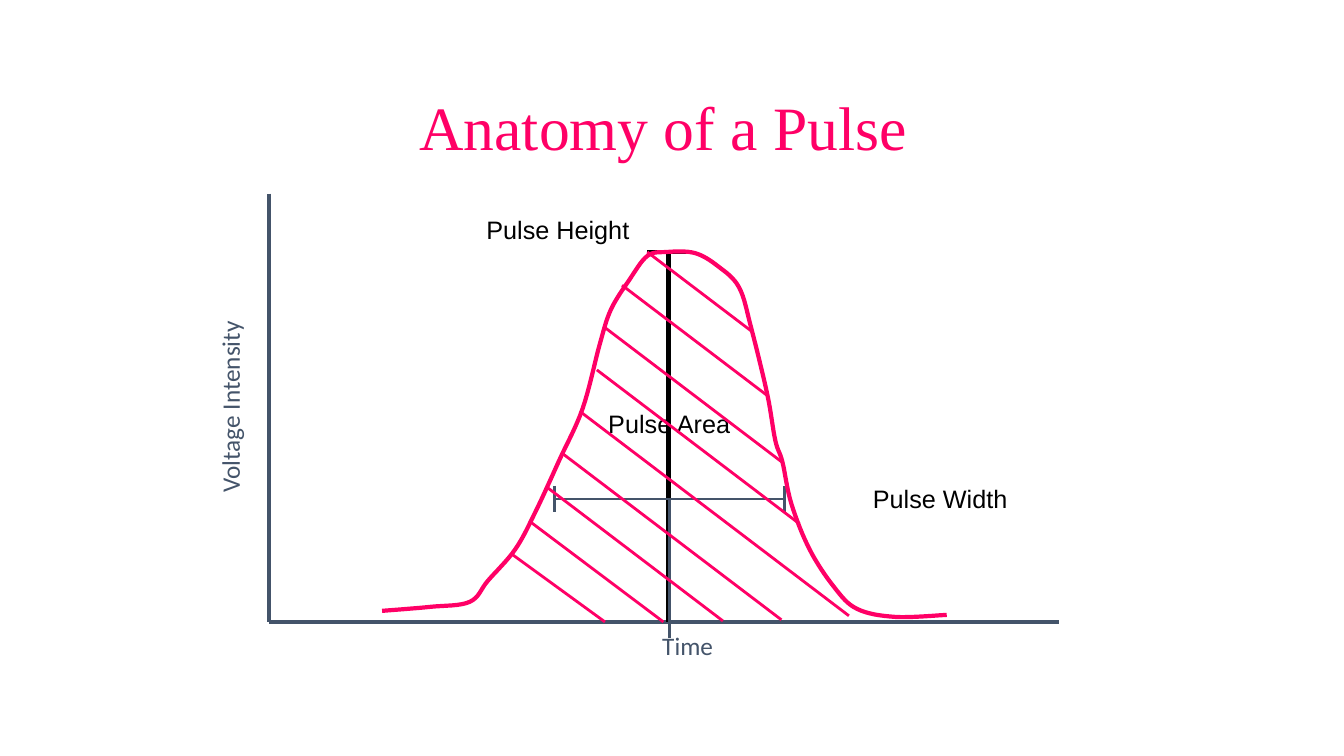
from pptx import Presentation
from pptx.dml.color import RGBColor
from pptx.enum.shapes import MSO_CONNECTOR
from pptx.enum.text import MSO_ANCHOR, PP_ALIGN
from pptx.oxml.ns import qn
from pptx.util import Inches, Pt
from lxml.etree import SubElement


class Theme:
    pink = RGBColor.from_string("FF0066")
    slate = RGBColor.from_string("44546A")
    black = RGBColor.from_string("000000")
    title = 44
    label = 18
    thick = 3
    thin = 2


deck = Presentation()
deck.slide_width, deck.slide_height = Inches(13.33), Inches(7.5)
slide = deck.slides.add_slide(deck.slide_layouts[6])
shapes = slide.shapes


def write(text, left, top, width, height=0.4, size=Theme.label, font="Arial",
          color=Theme.black, align=PP_ALIGN.RIGHT, anchor=MSO_ANCHOR.TOP,
          wrap=False, space=1.0, turn=0):
    box = shapes.add_textbox(Inches(left), Inches(top), Inches(width), Inches(height))
    box.rotation = turn
    frame = box.text_frame
    frame.word_wrap = wrap
    frame.vertical_anchor = anchor
    para = frame.paragraphs[0]
    para.alignment = align
    para.line_spacing = space
    run = para.add_run()
    run.text = text
    run.font.size = Pt(size)
    run.font.name = font
    run.font.color.rgb = color


def draw(x1, y1, x2, y2, color, weight):
    line = shapes.add_connector(MSO_CONNECTOR.STRAIGHT, Inches(x1), Inches(y1),
                                Inches(x2), Inches(y2))
    line.line.color.rgb = color
    line.line.width = Pt(weight)
    SubElement(line._element.spPr, qn("a:effectLst"))


# Title
write("Anatomy of a Pulse", 2.33, 0.67, 8.5, 1.25, size=Theme.title,
      font="Times New Roman", color=Theme.pink, align=PP_ALIGN.CENTER,
      anchor=MSO_ANCHOR.MIDDLE, wrap=True, space=0.9)

# Axes meet at the origin
start, base = 2.67, 6.17
draw(start, 1.92, start, base, Theme.slate, Theme.thick)
draw(start, base, 10.5, base, Theme.slate, Theme.thick)

# Pulse height: a stem with a cap at the peak
stem, peak, cap = 6.63, 2.5, 0.21
draw(stem, peak, stem, base, Theme.black, Theme.thick)
draw(stem - cap, peak, stem + cap, peak, Theme.black, Theme.thick)
write("Pulse Height", 4.67, 2.08, 1.67, wrap=True)

# Pulse width: a bar with a tick at each end and a drop line past the time axis
near, far, level, tick = 5.5, 7.78, 4.95, 0.13
center = (near + far) / 2
draw(center, 6.33, center, level, Theme.slate, Theme.thin)
draw(near, level, far, level, Theme.slate, Theme.thin)
for x in (near, far):
    draw(x, level - tick, x, level + tick, Theme.slate, Theme.thin)
write("Pulse Width", 8.54, 4.75, 1.55)

# Axis and area labels
write("Time", 6.46, 6.2, 0.71, font="Calibri", color=Theme.slate)
write("Voltage Intensity", 1.32, 3.85, 1.92, font="Calibri",
      color=Theme.slate, turn=270)
write("Pulse Area", 5.92, 4, 1.42)

# Pulse curve: a Catmull-Rom spline through the knots of each part
tail = [(3.79, 6.06), (4.27, 6.02), (4.66, 5.97)]
rise = [(4.84, 5.76), (5.11, 5.45), (5.31, 5.08), (5.55, 4.56),
        (5.78, 4.05), (5.95, 3.41), (6.06, 3.07), (6.24, 2.78)]
crest = [(6.42, 2.54), (6.61, peak), (6.89, 2.51), (7.12, 2.64), (7.33, 2.85)]
fall = [(7.45, 3.25), (7.61, 3.91), (7.69, 4.37), (7.76, 4.58), (7.85, 5),
        (8.03, 5.45), (8.27, 5.82)]
rest = [(8.5, 6.04), (8.88, 6.12), (9.39, 6.1)]
knots = tail + rise + crest + fall + rest
steps = 8

ends = [knots[0]] + knots + [knots[-1]]
spots = [knots[0]]
for quad in zip(ends, ends[1:], ends[2:], ends[3:]):
    for step in range(1, steps + 1):
        t = step / steps
        spots.append([
            b + t * (c - a) / 2
            + t ** 2 * (2 * a - 5 * b + 4 * c - d) / 2
            + t ** 3 * (3 * b - a - 3 * c + d) / 2
            for a, b, c, d in zip(*quad)
        ])
spots = [(Inches(x), Inches(y)) for x, y in spots]

outline = shapes.build_freeform(*spots[0])
outline.add_line_segments(spots[1:], close=False)
pulse = outline.convert_to_shape()
pulse.shadow.inherit = False
pulse.fill.background()
pulse.line.color.rgb = Theme.pink
pulse.line.width = Pt(Theme.thick)

# Hatching: parallel lines from the rising side, stopped at the time axis
slope = 0.76
hatch = [  # left, top, right
    (5.08, 5.5, 6), (5.25, 5.17, 6.58), (5.42, 4.83, 7.17),
    (5.58, 4.5, 7.75), (5.75, 4.08, 8.42), (5.92, 3.67, 7.93),
    (6, 3.25, 7.76), (6.17, 2.83, 7.61), (6.42, peak, 7.47),
]
for left, top, right in hatch:
    foot = min(base, top + slope * (right - left))
    draw(left, top, right, foot, Theme.pink, Theme.thin)

deck.save("out.pptx")
